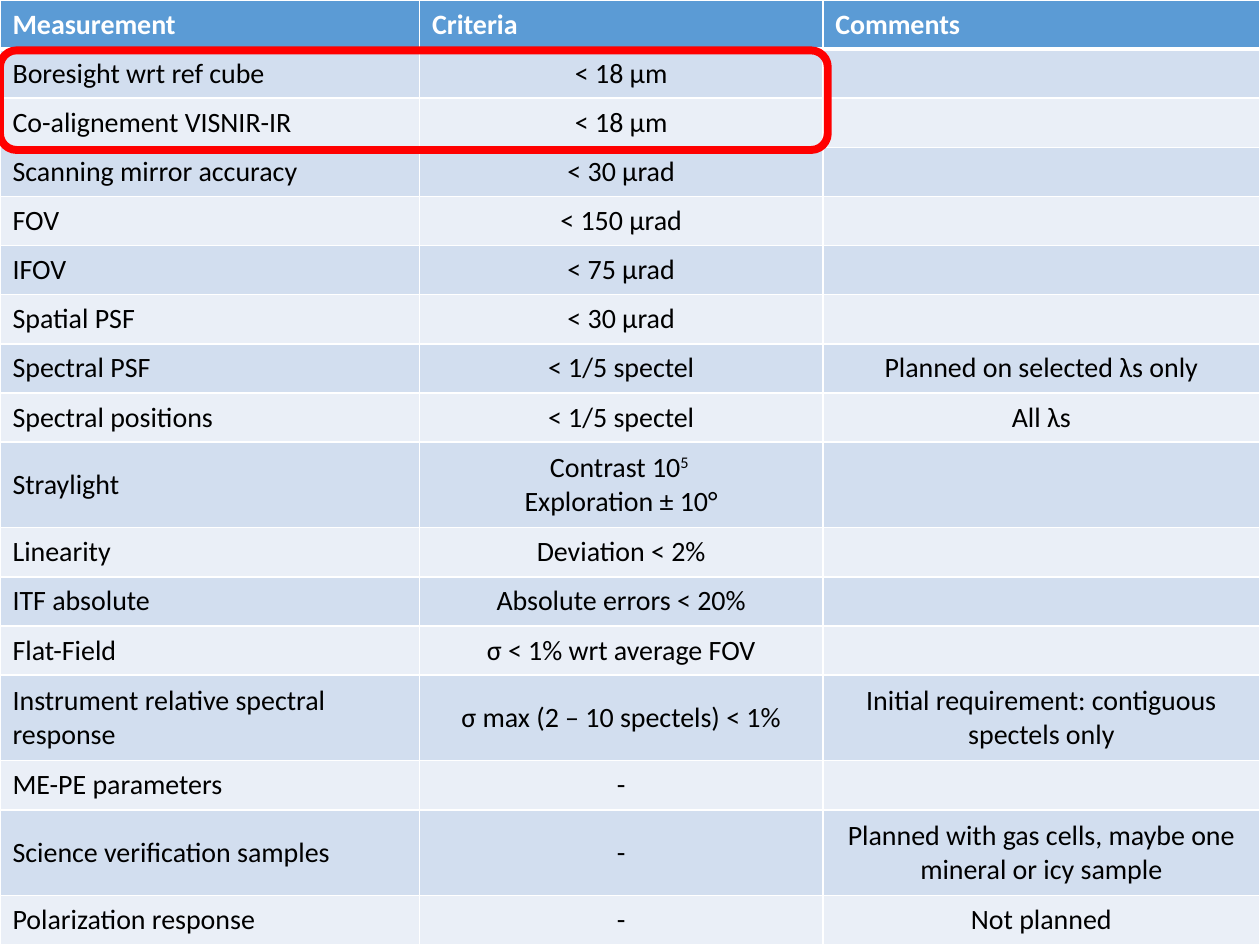
from lxml.etree import SubElement
from pptx import Presentation
from pptx.dml.color import RGBColor
from pptx.enum.shapes import MSO_SHAPE as Shape
from pptx.enum.text import MSO_ANCHOR as Anchor, PP_ALIGN as Align
from pptx.oxml import parse_xml
from pptx.oxml.ns import nsdecls, qn
from pptx.util import Pt

PX = 9144  # 100 px to the inch
COLS = [333, 320, 347]
LOW, HIGH = 39, 68
TALL = {9, 13, 15}
HEAD, BANDS = "5B9BD5", ["EAEFF7", "D2DEEF"]
# "^" starts a superscript
ROWS = [
    ("Measurement", "Criteria", "Comments"),
    ("Boresight wrt ref cube", "< 18 µm", ""),
    ("Co-alignement VISNIR-IR", "< 18 µm", ""),
    ("Scanning mirror accuracy", "< 30 µrad", ""),
    ("FOV", "< 150 µrad", ""),
    ("IFOV", "< 75 µrad", ""),
    ("Spatial PSF", "< 30 µrad", ""),
    ("Spectral PSF", "< 1/5 spectel", "Planned on selected λs only"),
    ("Spectral positions", "< 1/5 spectel", "All λs"),
    ("Straylight", "Contrast 10^5 \nExploration ± 10°", ""),
    ("Linearity", "Deviation < 2%", ""),
    ("ITF absolute", "Absolute errors < 20%", ""),
    ("Flat-Field", "σ < 1% wrt average FOV", ""),
    ("Instrument relative spectral response", "σ max (2 – 10 spectels) < 1%",
     "Initial requirement: contiguous spectels only"),
    ("ME-PE parameters", "-", ""),
    ("Science verification samples", "-",
     "Planned with gas cells, maybe one mineral or icy sample"),
    ("Polarization response", "-", "Not planned"),
]


def color(code):
    return RGBColor.from_string(code)


def add_borders(cell, top, bottom):
    props = cell._tc.get_or_add_tcPr()
    widths = {"lnL": 1, "lnR": 1, "lnT": top, "lnB": bottom}
    for i, (side, width) in enumerate(widths.items()):
        props.insert(i, parse_xml(
            f'<a:{side} {nsdecls("a")} w="{Pt(width)}"><a:solidFill>'
            f'<a:srgbClr val="FFFFFF"/></a:solidFill></a:{side}>'))


def style_run(run, head):
    font = run.font
    font.name, font.size, font.bold = "Calibri", Pt(16), head
    font.color.rgb = color("FFFFFF" if head else "000000")


def fill_cell(cell, text, row, col):
    head = row == 0
    cell.fill.solid()
    cell.fill.fore_color.rgb = color(HEAD if head else BANDS[row % 2])
    cell.vertical_anchor = Anchor.MIDDLE
    add_borders(cell, 3 if row == 1 else 1, 3 if head else 1)
    frame = cell.text_frame
    frame.text = text.replace("^", "")
    for para, line in zip(frame.paragraphs, text.split("\n")):
        para.alignment = Align.LEFT if head or col == 0 else Align.CENTER
        base, mark, power = line.partition("^")
        if mark:
            para.text = base
            raised = para.add_run()
            raised.text = power
            raised.font._element.set("baseline", "30000")
        for run in para.runs:
            style_run(run, head)
        if not line:  # keeps an empty cell from stretching its row
            SubElement(para._p, qn("a:endParaRPr"), sz="1600")


def add_criteria(slide, x, y, w, h):
    frame = slide.shapes.add_table(
        len(ROWS), len(COLS), x * PX, y * PX, w * PX, h * PX)
    table = frame.table
    for col, width in zip(table.columns, COLS):
        col.width = width * PX
    for r, texts in enumerate(ROWS):
        table.rows[r].height = (HIGH if r in TALL else LOW) * PX
        for c, text in enumerate(texts):
            fill_cell(table.cell(r, c), text, r, c)


def add_frame(slide, x, y, w, h):
    box = slide.shapes.add_shape(
        Shape.ROUNDED_RECTANGLE, x * PX, y * PX, w * PX, h * PX)
    box.shadow.inherit = False
    box.fill.background()
    box.line.color.rgb = color("FF0000")
    box.line.width = Pt(4.5)


def main():
    deck = Presentation()
    deck.slide_width, deck.slide_height = 1000 * PX, 750 * PX
    slide = deck.slides.add_slide(deck.slide_layouts[6])
    add_criteria(slide, 0, 0, 1000, 750)
    add_frame(slide, 0, 40, 657, 79)
    deck.save("out.pptx")


if __name__ == "__main__":
    main()
